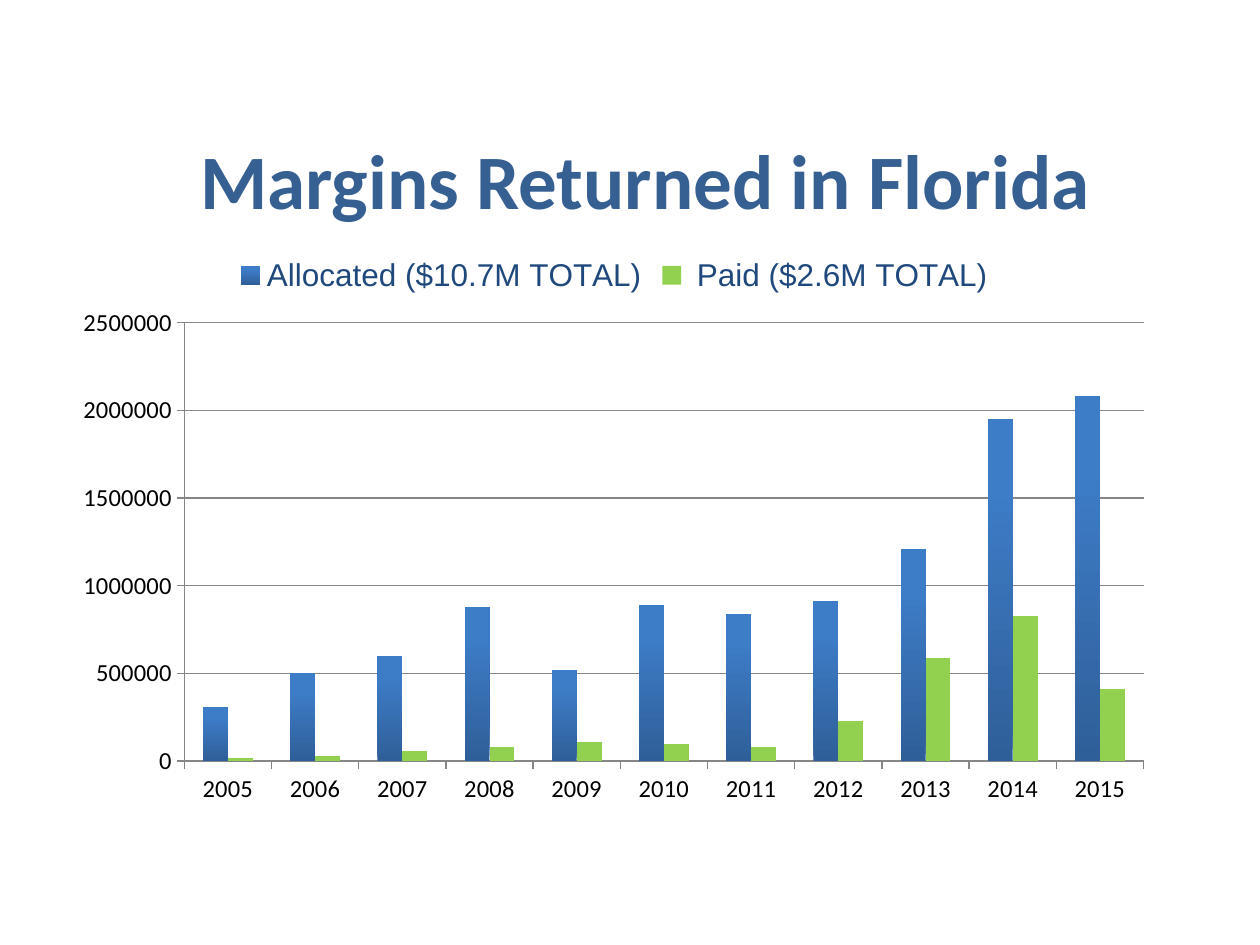
from lxml.etree import SubElement
from pptx import Presentation
from pptx.chart.data import CategoryChartData
from pptx.dml.color import RGBColor
from pptx.enum.chart import XL_CHART_TYPE, XL_LEGEND_POSITION, XL_TICK_MARK
from pptx.enum.text import MSO_ANCHOR, PP_ALIGN
from pptx.oxml.ns import qn
from pptx.util import Cm, Pt

TITLE_BLUE = RGBColor(0x37, 0x60, 0x92)
LEGEND_BLUE = RGBColor(0x1F, 0x49, 0x7D)
BAR_DARK = RGBColor(0x2F, 0x5F, 0x99)
BAR_LIGHT = RGBColor(0x3D, 0x7C, 0xC7)
PAID_GREEN = RGBColor(0x92, 0xD0, 0x50)
AXIS_GRAY = RGBColor(0x86, 0x86, 0x86)
BLACK = RGBColor(0, 0, 0)

presentation = Presentation()
presentation.slide_width = Cm(25.4)
presentation.slide_height = Cm(19.05)
slide = presentation.slides.add_slide(presentation.slide_layouts[6])

title = slide.shapes.add_textbox(Cm(1.9), Cm(2.34), Cm(22.23), Cm(2.54)).text_frame
title.word_wrap = True
title.vertical_anchor = MSO_ANCHOR.MIDDLE
heading = title.paragraphs[0]
heading.text = "Margins Returned in Florida"
heading.alignment = PP_ALIGN.CENTER
heading.font.name = "Calibri"
heading.font.size = Pt(44)
heading.font.bold = True
heading.font.color.rgb = TITLE_BLUE

margins = CategoryChartData(number_format="0")
margins.categories = [str(year) for year in range(2005, 2016)]
margins.add_series(
    "Allocated ($10.7M TOTAL)",
    [310000, 500000, 600000, 880000, 520000, 890000,
     840000, 910000, 1210000, 1950000, 2080000],
)
margins.add_series(
    " Paid ($2.6M TOTAL)",
    [20000, 30000, 60000, 80000, 110000, 100000,
     80000, 230000, 590000, 830000, 410000],
)
chart = slide.shapes.add_chart(
    XL_CHART_TYPE.COLUMN_CLUSTERED, Cm(1.27), Cm(4.88), Cm(22.23), Cm(11.63), margins
).chart
chart.has_title = False
chart.font.name = "Arial"
chart.font.size = Pt(18)
chart.font.color.rgb = BLACK

chart.has_legend = True
chart.legend.position = XL_LEGEND_POSITION.TOP
chart.legend.include_in_layout = False
chart.legend.font.name = "Arial"
chart.legend.font.size = Pt(18)
chart.legend.font.color.rgb = LEGEND_BLUE

years, dollars = chart.category_axis, chart.value_axis
for axis in (years, dollars):
    axis.major_tick_mark = XL_TICK_MARK.OUTSIDE
    axis.minor_tick_mark = XL_TICK_MARK.NONE
    axis.format.line.color.rgb = AXIS_GRAY
    axis.tick_labels.font.name = "Calibri"
    axis.tick_labels.font.size = Pt(14)
    axis.tick_labels.font.color.rgb = BLACK
dollars.minimum_scale = 0
dollars.maximum_scale = 2500000
dollars.major_unit = 500000
dollars.tick_labels.number_format = "0"
dollars.tick_labels.number_format_is_linked = False
dollars.has_major_gridlines = True
dollars.major_gridlines.format.line.color.rgb = AXIS_GRAY

bars = chart.plots[0]
bars.gap_width = 150
bars.overlap = 0
bars.vary_by_categories = False
allocated, paid = bars.series
allocated.format.fill.gradient()
allocated.format.fill.gradient_angle = 90
stops = allocated.format.fill.gradient_stops
for stop, position, color in zip(stops, (0, 0.8), (BAR_DARK, BAR_LIGHT)):
    stop.position = position
    stop.color.rgb = color
paid.format.fill.solid()
paid.format.fill.fore_color.rgb = PAID_GREEN

plot_area = chart.element.find(".//" + qn("c:plotArea"))
layout = plot_area.find(qn("c:layout"))
if layout is None:
    layout = SubElement(plot_area, qn("c:layout"))
    plot_area.insert(0, layout)
manual = SubElement(layout, qn("c:manualLayout"))
for tag, value in (
    ("layoutTarget", "inner"), ("xMode", "edge"), ("yMode", "edge"),
    ("x", "0.11"), ("y", "0.14"), ("w", "0.87"), ("h", "0.76"),
):
    SubElement(manual, qn("c:" + tag)).set("val", value)

presentation.save("out.pptx")
